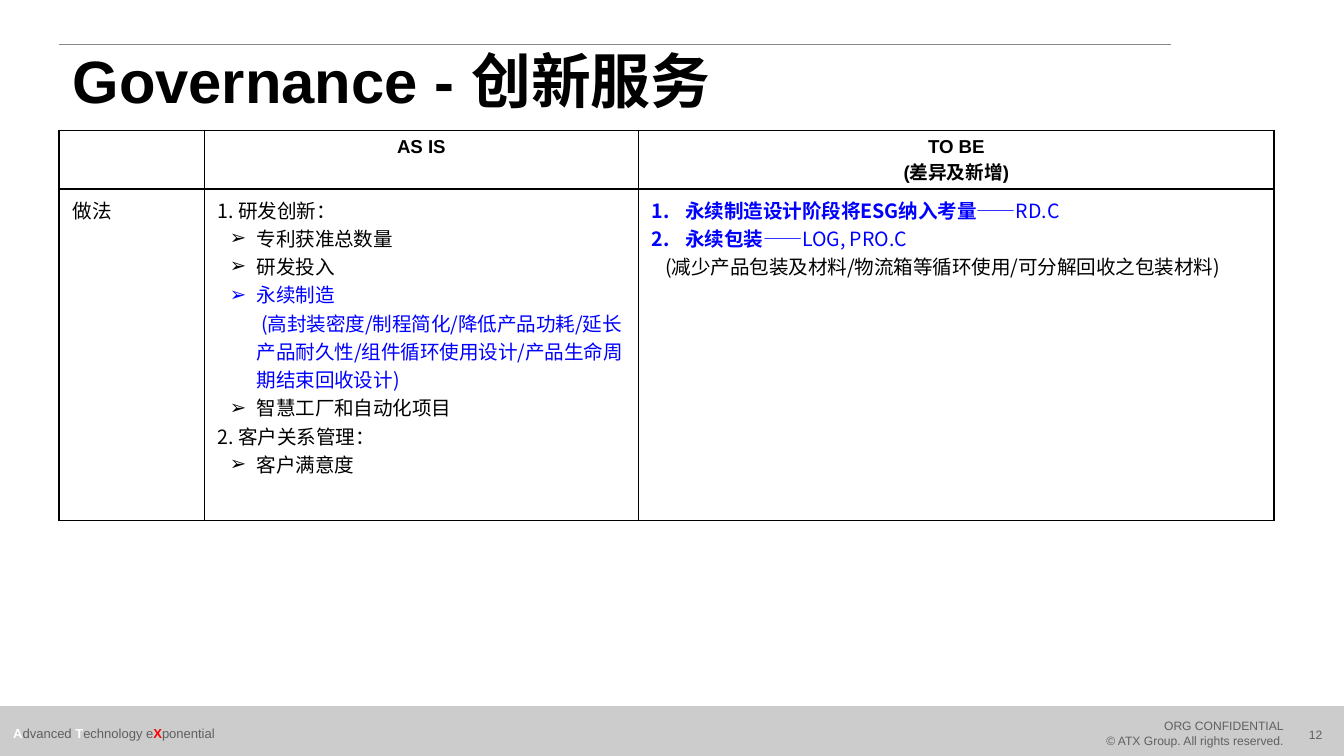
from lxml.etree import SubElement
from pptx import Presentation
from pptx.dml.color import RGBColor
from pptx.enum.shapes import MSO_CONNECTOR, MSO_SHAPE
from pptx.enum.text import MSO_ANCHOR, PP_ALIGN
from pptx.oxml.ns import qn
from pptx.util import Inches, Pt

BLACK = RGBColor(0x00, 0x00, 0x00)
WHITE = RGBColor(0xFF, 0xFF, 0xFF)
BLUE = RGBColor(0x00, 0x00, 0xFF)
RED = RGBColor(0xFF, 0x00, 0x00)
FOOTER_GRAY = RGBColor(0xCC, 0xCC, 0xCC)
TEXT_GRAY = RGBColor(0x60, 0x60, 0x60)
RULE_GRAY = RGBColor(0x8A, 0x8A, 0x8A)
LATIN_FONT = "Arial"
CHINESE_FONT = "Noto Sans CJK SC"


def add_paragraph(text_frame, *runs, size=10.5, font=CHINESE_FONT, color=BLACK, bold=False,
                  align=PP_ALIGN.LEFT, left=0, hanging=0, bullet=None, numbered=False):
    """Add a paragraph; a run is a string or a (string, color, bold) tuple."""
    paragraph = text_frame.paragraphs[0]
    if paragraph.runs:
        paragraph = text_frame.add_paragraph()
    paragraph.alignment = align
    properties = paragraph._p.get_or_add_pPr()
    properties.set("marL", str(Inches(left)))
    properties.set("indent", str(-Inches(hanging)))
    if bullet:
        SubElement(properties, qn("a:buFont"), typeface=LATIN_FONT)
        SubElement(properties, qn("a:buChar"), char=bullet)
    elif numbered:
        SubElement(properties, qn("a:buFont"), typeface=CHINESE_FONT)
        SubElement(properties, qn("a:buAutoNum"), type="arabicPeriod")
    else:
        SubElement(properties, qn("a:buNone"))
    for item in runs:
        text, run_color, run_bold = (item, color, bold) if isinstance(item, str) else item
        run = paragraph.add_run()
        run.text = text
        run.font.size = Pt(size)
        run.font.name = font
        run.font.bold = run_bold
        run.font.color.rgb = run_color
        SubElement(run._r.get_or_add_rPr(), qn("a:ea"), typeface=CHINESE_FONT)
    return paragraph


def add_text_box(slide, left, top, width, height):
    text_frame = slide.shapes.add_textbox(
        Inches(left), Inches(top), Inches(width), Inches(height)).text_frame
    text_frame.word_wrap = True
    text_frame.vertical_anchor = MSO_ANCHOR.MIDDLE
    return text_frame


presentation = Presentation()
presentation.slide_width = Inches(10)
presentation.slide_height = Inches(10) * 9 // 16
slide = presentation.slides.add_slide(presentation.slide_layouts[5])

# Footer
footer = slide.shapes.add_shape(
    MSO_SHAPE.RECTANGLE, Inches(0), Inches(5.26), Inches(10), Inches(0.36))
footer.shadow.inherit = False
footer.fill.solid()
footer.fill.fore_color.rgb = FOOTER_GRAY
footer.line.color.rgb = FOOTER_GRAY
footer.line.width = Pt(1)

footer_format = {"size": 6.5, "font": LATIN_FONT, "color": TEXT_GRAY}
page_number = add_text_box(slide, 9.51, 5.32, 0.56, 0.29)
add_paragraph(page_number, "12", align=PP_ALIGN.CENTER, **footer_format)

notice = add_text_box(slide, 7.97, 5.3, 1.68, 0.31)
for line in ("ORG CONFIDENTIAL", "© ATX Group. All rights reserved."):
    add_paragraph(notice, line, align=PP_ALIGN.RIGHT, **footer_format)

tagline = add_text_box(slide, 0, 5.3, 1.91, 0.31)
add_paragraph(tagline, ("A", WHITE, True), "dvanced ", ("T", WHITE, True), "echnology e",
              ("X", RED, True), "ponential", size=7, font=LATIN_FONT, color=TEXT_GRAY)

# Title and the rule above it
rule = slide.shapes.add_connector(
    MSO_CONNECTOR.STRAIGHT, Inches(0.44), Inches(0.33), Inches(8.71), Inches(0.33))
rule.line.color.rgb = RULE_GRAY
rule.line.width = Pt(0.5)
SubElement(rule._element.spPr, qn("a:effectLst"))

title = slide.shapes.title
title.left, title.top = Inches(0.44), Inches(0.35)
title.width, title.height = Inches(8.62), Inches(0.55)
title.text_frame.vertical_anchor = MSO_ANCHOR.MIDDLE
heading = add_paragraph(title.text_frame, "Governance - 创新服务",
                        size=32, font=LATIN_FONT, bold=True)
heading.line_spacing = 0.9

# Comparison table
column_widths = (1.08, 3.23, 4.73)
row_heights = (0.38, 2.47)
table = slide.shapes.add_table(
    len(row_heights), len(column_widths), Inches(0.44), Inches(0.97),
    Inches(sum(column_widths)), Inches(sum(row_heights))).table
table.first_row = False
table.horz_banding = False
for column, width in zip(table.columns, column_widths):
    column.width = Inches(width)
for row, height in zip(table.rows, row_heights):
    row.height = Inches(height)
for cell in table.iter_cells():
    cell_properties = cell._tc.get_or_add_tcPr()
    for side in ("a:lnL", "a:lnR", "a:lnT", "a:lnB"):
        border = SubElement(cell_properties, qn(side), w=str(Pt(1)))
        border_fill = SubElement(border, qn("a:solidFill"))
        SubElement(border_fill, qn("a:srgbClr"), val=str(BLACK))
    cell.fill.background()

for column_index, lines in ((1, ["AS IS"]), (2, ["TO BE", "(差异及新增)"])):
    for line in lines:
        add_paragraph(table.cell(0, column_index).text_frame, line, size=10,
                      font=LATIN_FONT, bold=True, align=PP_ALIGN.CENTER)

add_paragraph(table.cell(1, 0).text_frame, "做法", font=LATIN_FONT)

as_is = table.cell(1, 1).text_frame
arrow = {"left": 0.29, "hanging": 0.2, "bullet": "➢"}
add_paragraph(as_is, "1. 研发创新：")
add_paragraph(as_is, "专利获准总数量", **arrow)
add_paragraph(as_is, "研发投入", **arrow)
add_paragraph(as_is, "永续制造", color=BLUE, **arrow)
add_paragraph(as_is, " (高封装密度/制程简化/降低产品功耗/延长产品耐久性/组件循环使用设计/产品生命周期结束回收设计)",
              color=BLUE, left=0.29)
add_paragraph(as_is, "智慧工厂和自动化项目", **arrow)
add_paragraph(as_is, "2. 客户关系管理：")
add_paragraph(as_is, "客户满意度", **arrow)

to_be = table.cell(1, 2).text_frame
for measure, owner in (("永续制造设计阶段将ESG纳入考量", "——RD.C"),
                       ("永续包装", "——LOG, PRO.C")):
    add_paragraph(to_be, (measure, BLUE, True), (owner, BLUE, False),
                  left=0.25, hanging=0.25, numbered=True)
add_paragraph(to_be, "(减少产品包装及材料/物流箱等循环使用/可分解回收之包装材料)", left=0.1)

presentation.save("out.pptx")
